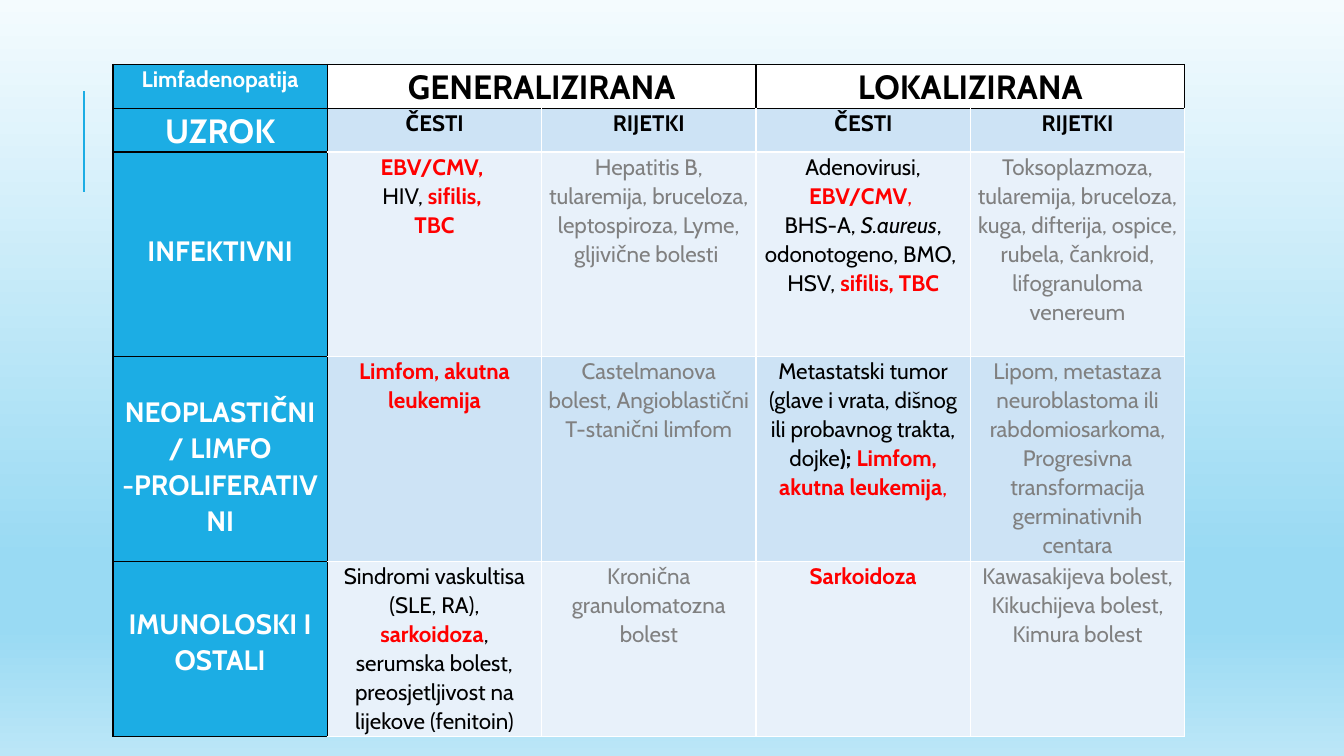
"""Build a slide with a table of lymphadenopathy causes by spread and frequency."""
from lxml.etree import SubElement
from pptx import Presentation
from pptx.dml.color import RGBColor
from pptx.enum.shapes import MSO_CONNECTOR
from pptx.enum.text import PP_ALIGN
from pptx.oxml import parse_xml
from pptx.oxml.ns import nsdecls, qn
from pptx.util import Inches, Pt

THEME = {
    "font": "Cabin",
    "accent": "1CADE4",
    "white": "FFFFFF",
    "black": "000000",
    "bands": ["CDE3F5", "E8F1FA"],
    "background": [(0, "F4FBFE"), (74, "99DAF3"), (83, "99DAF3"), (100, "BBE6F7")],
    "text": {
        "corner": ("FFFFFF", {"size": Pt(16), "bold": True}),
        "cause": ("FFFFFF", {"size": Pt(24), "bold": True}),
        "group": ("FFFFFF", {"size": Pt(20), "bold": True}),
        "spread": ("000000", {"size": Pt(24), "bold": True}),
        "strong": ("000000", {"size": Pt(16), "bold": True}),
        "plain": ("000000", {"size": Pt(16), "bold": False}),
        "italic": ("000000", {"size": Pt(16), "bold": False, "italic": True}),
        "key": ("FF0000", {"size": Pt(16), "bold": True}),
        "comma": ("FF0000", {"size": Pt(16), "bold": False}),
        "rare": ("808080", {"size": Pt(16), "bold": False}),
    },
}


def write_cell(cell, paragraphs):
    for number, runs in enumerate(paragraphs):
        frame = cell.text_frame
        paragraph = frame.add_paragraph() if number else frame.paragraphs[0]
        paragraph.alignment = PP_ALIGN.CENTER
        paragraph.line_spacing = 1.07
        for style, text in runs:
            run = paragraph.add_run()
            run.text = text
            color, formats = THEME["text"][style]
            run.font.name = THEME["font"]
            run.font.color.rgb = RGBColor.from_string(color)
            for attribute, value in formats.items():
                setattr(run.font, attribute, value)


def draw_borders(cell, colors):
    for position, (side, color) in enumerate(colors.items()):
        cell._tc.get_or_add_tcPr().insert(position, parse_xml(
            f'<a:ln{side} {nsdecls("a")} w="12700"><a:solidFill>'
            f'<a:srgbClr val="{color}"/></a:solidFill></a:ln{side}>'))


frequencies = [[[("strong", word)]] for word in ("ČESTI", "RIJETKI")]
rows = [
    [[[("corner", "Limfadenopatija")]],
     [[("spread", "GENERALIZIRANA")]], [],
     [[("spread", "LOKALIZIRANA")]], []],
    [[[("cause", "UZROK")]], *frequencies, *frequencies],
    [[[("group", "INFEKTIVNI")]],
     [[("key", "EBV/CMV, ")],
      [("plain", "HIV, "), ("key", "sifilis, ")],
      [("key", "TBC")]],
     [[("rare", "Hepatitis B, tularemija, bruceloza, leptospiroza, Lyme, "
                "gljivične bolesti ")]],
     [[("plain", "Adenovirusi, "), ("key", "EBV/CMV"), ("comma", ", ")],
      [("plain", "BHS-A, "), ("italic", "S.aureus"), ("plain", ", odonotogeno, BMO, ")],
      [("plain", "HSV, "), ("key", "sifilis, TBC")]],
     [[("rare", "Toksoplazmoza, tularemija, bruceloza, kuga, difterija, ospice, "
                "rubela, čankroid, lifogranuloma venereum")]]],
    [[[("group", "NEOPLASTIČNI / LIMFO -PROLIFERATIVNI")]],
     [[("key", "Limfom, akutna leukemija")]],
     [[("rare", "Castelmanova bolest, Angioblastični T-stanični limfom")]],
     [[("plain", "Metastatski tumor (glave i vrata, dišnog ili probavnog trakta, dojke"),
       ("strong", "); "), ("key", "Limfom, akutna leukemija"), ("comma", ",")]],
     [[("rare", "Lipom, metastaza neuroblastoma ili rabdomiosarkoma, Progresivna "
                "transformacija germinativnih centara")]]],
    [[[("group", "IMUNOLOSKI I OSTALI")]],
     [[("plain", "Sindromi vaskultisa (SLE, RA), "), ("key", "sarkoidoza"),
       ("plain", ", serumska bolest, preosjetljivost na lijekove (fenitoin)")]],
     [[("rare", "Kronična granulomatozna bolest")]],
     [[("key", "Sarkoidoza")]],
     [[("rare", "Kawasakijeva bolest, Kikuchijeva bolest, Kimura bolest")]]],
]
row_heights = [0.43, 0.43, 2.03, 2.03, 1.74]
group_offsets = [0, 0, 0.79, 0.36, 0.43]

presentation = Presentation()
presentation.slide_width = Inches(13.33)
presentation.slide_height = Inches(7.5)
slide = presentation.slides.add_slide(presentation.slide_layouts[6])

backdrop = slide.background.fill
backdrop.gradient()
backdrop.gradient_angle = 270
stops = slide.element.find(".//" + qn("a:gsLst"))
for stop in list(stops):
    stops.remove(stop)
for percent, color in THEME["background"]:
    stop = SubElement(stops, qn("a:gs"), pos=str(percent * 1000))
    SubElement(stop, qn("a:srgbClr"), val=color)

accent_rule = slide.shapes.add_connector(
    MSO_CONNECTOR.STRAIGHT, Inches(0.83), Inches(1.9), Inches(0.83), Inches(0.9))
accent_rule.line.color.rgb = RGBColor.from_string(THEME["accent"])
accent_rule.line.width = Pt(1.5)
SubElement(accent_rule.element.spPr, qn("a:effectLst"))

causes = slide.shapes.add_table(
    len(rows), 5, Inches(1.12), Inches(0.64), Inches(10.63), Inches(sum(row_heights))).table
causes.first_row = False
causes.horz_banding = False
for column in causes.columns:
    column.width = Inches(10.63 / 5)
for first in (1, 3):
    causes.cell(0, first).merge(causes.cell(0, first + 1))

for r, row in enumerate(rows):
    causes.rows[r].height = Inches(row_heights[r])
    for c, paragraphs in enumerate(row):
        cell = causes.cell(r, c)
        margins = {"margin_left": 0.07, "margin_right": 0.07, "margin_bottom": 0,
                   "margin_top": group_offsets[r] if c == 0 else 0}
        for attribute, value in margins.items():
            setattr(cell, attribute, Inches(value))
        write_cell(cell, paragraphs)
        heading = r == 0 or c == 0
        fill = THEME["accent"] if c == 0 else THEME["white"] if r == 0 else THEME["bands"][(r + 1) % 2]
        cell.fill.solid()
        cell.fill.fore_color.rgb = RGBColor.from_string(fill)
        dark_sides = {"L": heading or c == 1, "R": heading, "T": heading or r == 1, "B": heading}
        draw_borders(cell, {side: THEME["black" if dark else "white"]
                            for side, dark in dark_sides.items()})

presentation.save("out.pptx")
